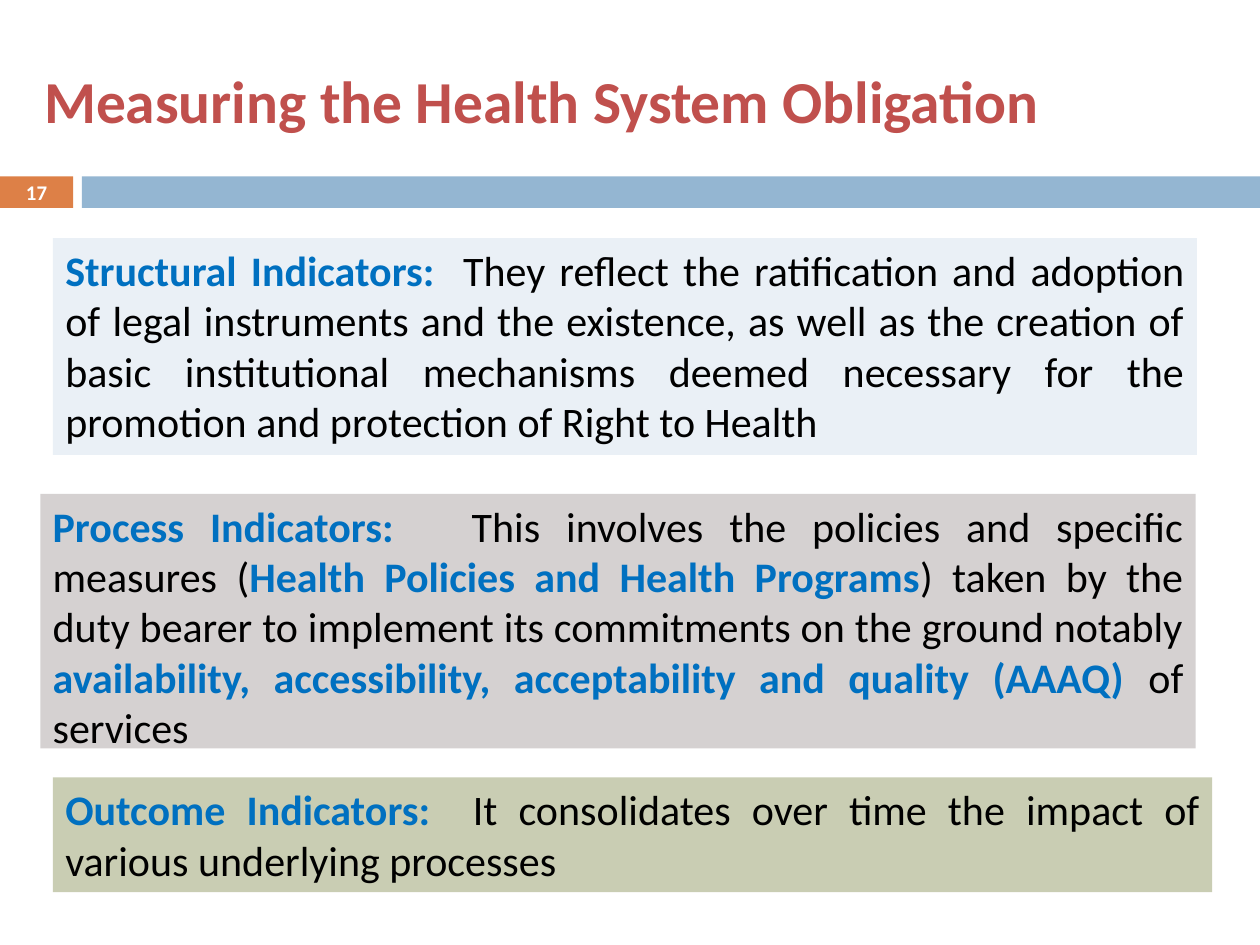
import pptx
import pptx.util
import pptx.dml.color
import pptx.enum.shapes
import pptx.enum.text

RGB = pptx.dml.color.RGBColor
ALIGN = pptx.enum.text.PP_ALIGN
ANCHOR = pptx.enum.text.MSO_ANCHOR

RED = RGB(0xC0, 0x50, 0x4D)
ORANGE = RGB(0xDD, 0x80, 0x47)
SKY = RGB(0x94, 0xB6, 0xD2)
BLUE = RGB(0x00, 0x70, 0xC0)
BLACK = RGB(0x00, 0x00, 0x00)
WHITE = RGB(0xFF, 0xFF, 0xFF)
PALE_BLUE = RGB(0xEA, 0xF0, 0xF6)
WARM_GREY = RGB(0xD5, 0xD1, 0xD1)
SAGE = RGB(0xC9, 0xCD, 0xB3)

COLUMNS, ROWS = 100, 75

INDICATORS = [
    ((4.2, 18.9, 90.8, 17.2), PALE_BLUE, [
        ("Structural Indicators:  ", True),
        ("They reflect the ratification and adoption of legal instruments and the "
         "existence, as well as the creation of basic institutional mechanisms deemed "
         "necessary for the promotion and protection of Right to Health", False)]),
    ((3.2, 39.2, 91.7, 20.2), WARM_GREY, [
        ("Process Indicators:   ", True),
        ("This involves the policies and specific measures (", False),
        ("Health Policies and Health Programs", True),
        (") taken by the duty bearer to implement its commitments on the ground "
         "notably ", False),
        ("availability, accessibility, acceptability and quality (AAAQ) ", True),
        ("of services", False)]),
    ((4.2, 61.7, 92, 9.1), SAGE, [
        ("Outcome Indicators:  ", True),
        ("It consolidates over time the impact of various underlying processes", False)]),
]


class IndicatorSlide:
    font = "Calibri"
    body_size = 24

    def __init__(self, deck):
        self.column = deck.slide_width / COLUMNS
        self.row = deck.slide_height / ROWS
        self.slide = deck.slides.add_slide(deck.slide_layouts[5])

    def place(self, box):
        left, top, width, height = box
        return (round(left * self.column), round(top * self.row),
                round(width * self.column), round(height * self.row))

    def style(self, run, size, color, bold=True):
        run.font.name = self.font
        run.font.size = pptx.util.Pt(size)
        run.font.color.rgb = color
        run.font.bold = bold

    def line(self, frame, text, size, color, align):
        frame.word_wrap = True
        frame.vertical_anchor = ANCHOR.MIDDLE
        frame.text = text
        frame.paragraphs[0].alignment = align
        self.style(frame.paragraphs[0].runs[0], size, color)

    def title(self, box, text):
        heading = self.slide.shapes.title
        heading.left, heading.top, heading.width, heading.height = self.place(box)
        heading.text_frame.auto_size = pptx.enum.text.MSO_AUTO_SIZE.NONE
        self.line(heading.text_frame, text, 34, RED, ALIGN.JUSTIFY)

    def band(self, box, color):
        band = self.slide.shapes.add_shape(
            pptx.enum.shapes.MSO_SHAPE.RECTANGLE, *self.place(box))
        band.shadow.inherit = False
        band.fill.solid()
        band.fill.fore_color.rgb = color
        band.line.fill.background()
        return band

    def page_number(self, box, text):
        number = self.slide.shapes.add_textbox(*self.place(box))
        self.line(number.text_frame, text, 11.9, WHITE, ALIGN.CENTER)

    def panel(self, box, color, passages):
        frame = self.band(box, color).text_frame
        frame.word_wrap = True
        frame.vertical_anchor = ANCHOR.TOP
        paragraph = frame.paragraphs[0]
        paragraph.alignment = ALIGN.JUSTIFY
        for text, key in passages:
            run = paragraph.add_run()
            run.text = text
            self.style(run, self.body_size, BLUE if key else BLACK, key)


def main():
    deck = pptx.Presentation()
    deck.slide_width = pptx.util.Inches(10)
    deck.slide_height = pptx.util.Inches(7.5)

    page = IndicatorSlide(deck)
    page.band((0, 14, 5.8, 2.5), ORANGE)
    page.band((6.5, 14, 93.5, 2.5), SKY)
    page.title((2.5, 1.7, 95, 12.5), "Measuring the Health System Obligation")
    page.page_number((0, 13.9, 5.8, 2.7), "17")
    for box, color, passages in INDICATORS:
        page.panel(box, color, passages)

    deck.save("out.pptx")


if __name__ == "__main__":
    main()
